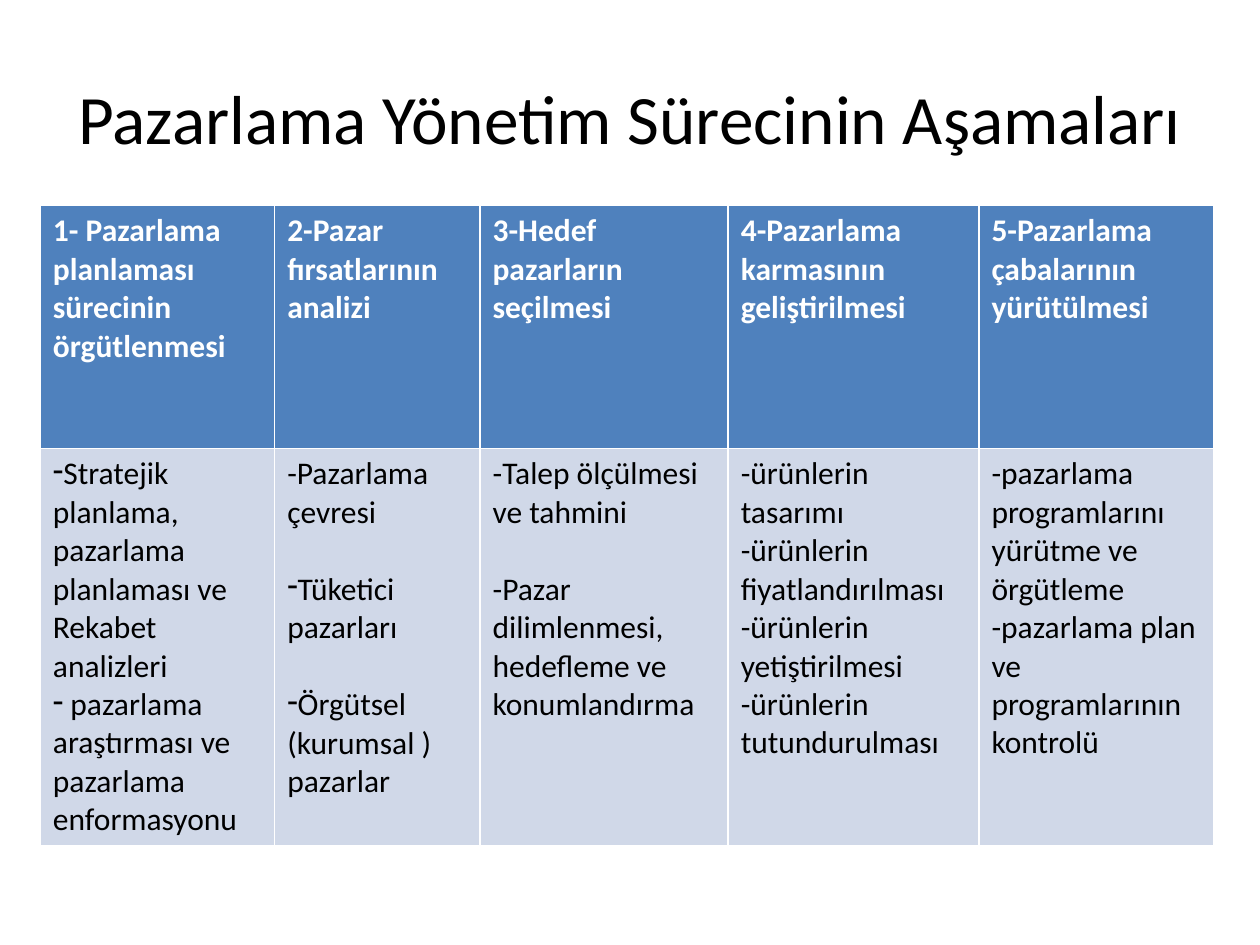
from dataclasses import dataclass

from lxml.etree import SubElement
from pptx import Presentation
from pptx.dml.color import RGBColor
from pptx.enum.text import MSO_ANCHOR, MSO_AUTO_SIZE, PP_ALIGN
from pptx.oxml.ns import qn
from pptx.util import Inches, Pt


@dataclass(frozen=True)
class Theme:
    """Hold the colours, font and type sizes."""
    font: str = "Calibri"
    dark: str = "000000"
    light: str = "FFFFFF"
    head: str = "4F81BD"
    body: str = "D0D8E8"
    title: float = 39.6
    text: float = 18
    gap: float = 22
    rule: float = 1


@dataclass(frozen=True)
class Item:
    """Hold one paragraph of a cell."""
    text: str
    dash: bool = False
    gap: bool = False


THEME = Theme()
WIDE, HIGH = Inches(10), Inches(7.5)
COLS = (1.86, 1.63, 1.97, 1.99, 1.86)
ROWS = (1.93, 3.1)
TITLE = "Pazarlama Yönetim Sürecinin Aşamaları"
STAGES = (
    ("1- Pazarlama planlaması sürecinin örgütlenmesi", (
        Item("Stratejik planlama, pazarlama planlaması ve Rekabet analizleri", dash=True),
        Item(" pazarlama araştırması ve pazarlama enformasyonu", dash=True))),
    ("2-Pazar fırsatlarının analizi", (
        Item("-Pazarlama çevresi"),
        Item("Tüketici pazarları", dash=True, gap=True),
        Item("Örgütsel (kurumsal ) pazarlar", dash=True, gap=True))),
    ("3-Hedef pazarların seçilmesi", (
        Item("-Talep ölçülmesi ve tahmini"),
        Item("-Pazar dilimlenmesi, hedefleme ve konumlandırma", gap=True))),
    ("4-Pazarlama karmasının geliştirilmesi", (
        Item("-ürünlerin tasarımı"),
        Item("-ürünlerin fiyatlandırılması"),
        Item("-ürünlerin yetiştirilmesi"),
        Item("-ürünlerin tutundurulması"))),
    ("5-Pazarlama çabalarının yürütülmesi", (
        Item("-pazarlama programlarını yürütme ve örgütleme"),
        Item("-pazarlama plan ve programlarının kontrolü"))),
)


def apply(thing, form):
    """Set each attribute named in a dict of format values."""
    for key, val in form.items():
        setattr(thing, key, val)


def write(para, text, size, tint, bold=False):
    """Add one styled run to a paragraph."""
    run = para.add_run()
    run.text = text
    apply(run.font, {"name": THEME.font, "size": Pt(size), "bold": bold})
    run.font.color.rgb = RGBColor.from_string(tint)


def place(shape, left, top, wide, high):
    """Put a shape at shares of the slide's size."""
    apply(shape, {"left": int(WIDE * left), "top": int(HIGH * top),
                  "width": int(WIDE * wide), "height": int(HIGH * high)})


def add_title(slide):
    """Fill and place the title."""
    shape = slide.shapes.title
    place(shape, 0.05, 0.04, 0.9, 1 / 6)
    frame = shape.text_frame
    apply(frame, {"word_wrap": True, "auto_size": MSO_AUTO_SIZE.NONE,
                  "vertical_anchor": MSO_ANCHOR.MIDDLE})
    para = frame.paragraphs[0]
    para.alignment = PP_ALIGN.CENTER
    write(para, TITLE, THEME.title, THEME.dark)


def add_dash(para):
    """Give a paragraph a dash as its bullet."""
    props = para._p.get_or_add_pPr()
    props.set("marL", "0")
    props.set("indent", "0")
    SubElement(props, qn("a:buChar"), char="-")


def add_rules(cell):
    """Draw the four borders of a cell."""
    props = cell._tc.get_or_add_tcPr()
    for side in "LRTB":
        line = SubElement(props, qn(f"a:ln{side}"), w=str(Pt(THEME.rule)))
        fill = SubElement(line, qn("a:solidFill"))
        SubElement(fill, qn("a:srgbClr"), val=THEME.light)


def fill_cell(cell, items, back, tint, bold=False):
    """Style a cell and write its paragraphs."""
    add_rules(cell)
    cell.fill.solid()
    cell.fill.fore_color.rgb = RGBColor.from_string(back)
    frame = cell.text_frame
    for num, item in enumerate(items):
        para = frame.add_paragraph() if num else frame.paragraphs[0]
        if item.gap:
            para.space_before = Pt(THEME.gap)
        if item.dash:
            add_dash(para)
        write(para, item.text, THEME.text, tint, bold)


def add_stages(slide):
    """Build the table of stages, one to a column."""
    table = slide.shapes.add_table(
        len(ROWS), len(COLS), Inches(0.32), Inches(1.63),
        Inches(sum(COLS)), Inches(sum(ROWS))).table
    for row, high in zip(table.rows, ROWS):
        row.height = Inches(high)
    for num, (wide, (head, items)) in enumerate(zip(COLS, STAGES)):
        table.columns[num].width = Inches(wide)
        fill_cell(table.cell(0, num), [Item(head)], THEME.head, THEME.light, True)
        fill_cell(table.cell(1, num), items, THEME.body, THEME.dark)


def main():
    """Build and save the slide."""
    deck = Presentation()
    apply(deck, {"slide_width": WIDE, "slide_height": HIGH})
    slide = deck.slides.add_slide(deck.slide_layouts[5])
    add_title(slide)
    add_stages(slide)
    deck.save("out.pptx")


if __name__ == "__main__":
    main()
